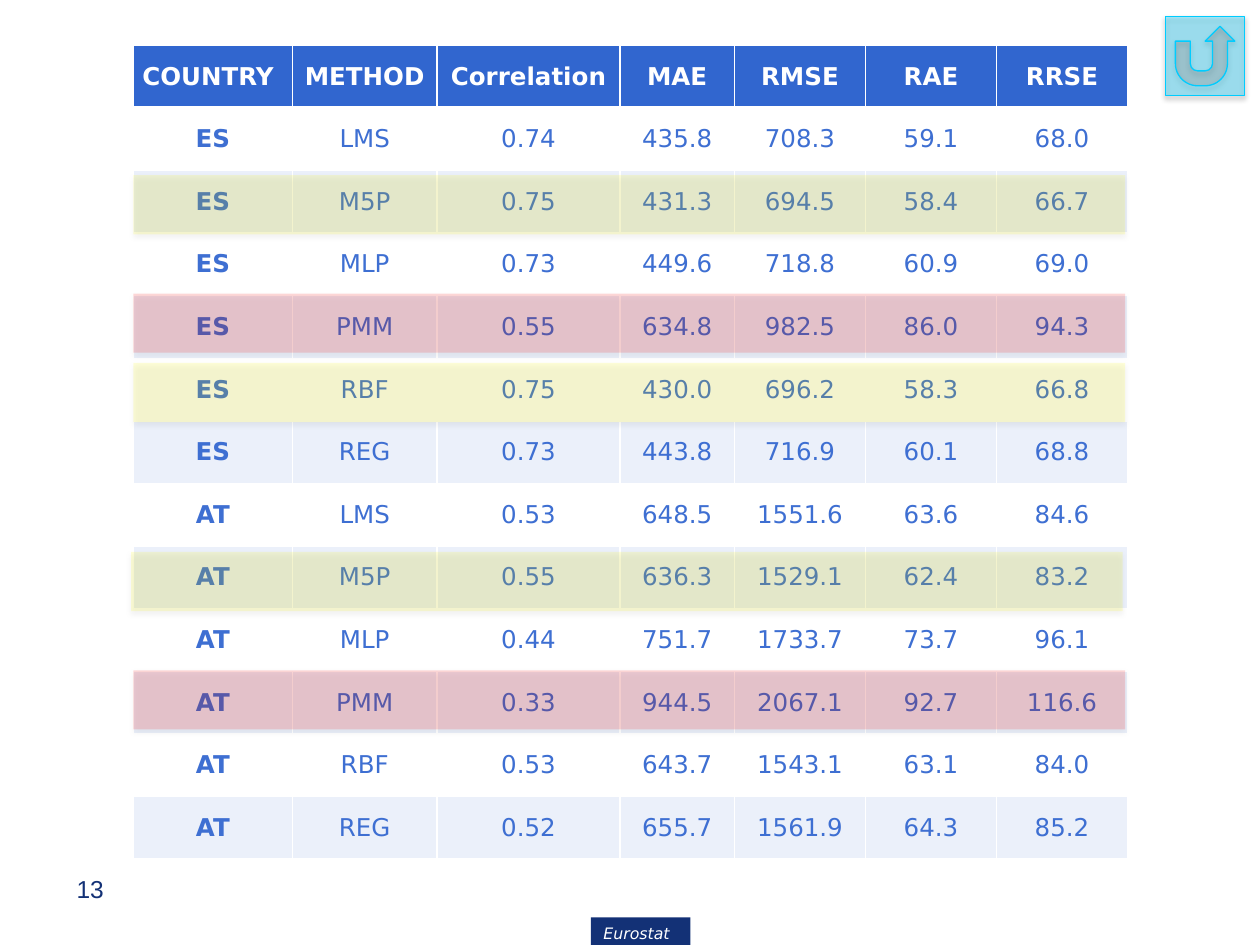
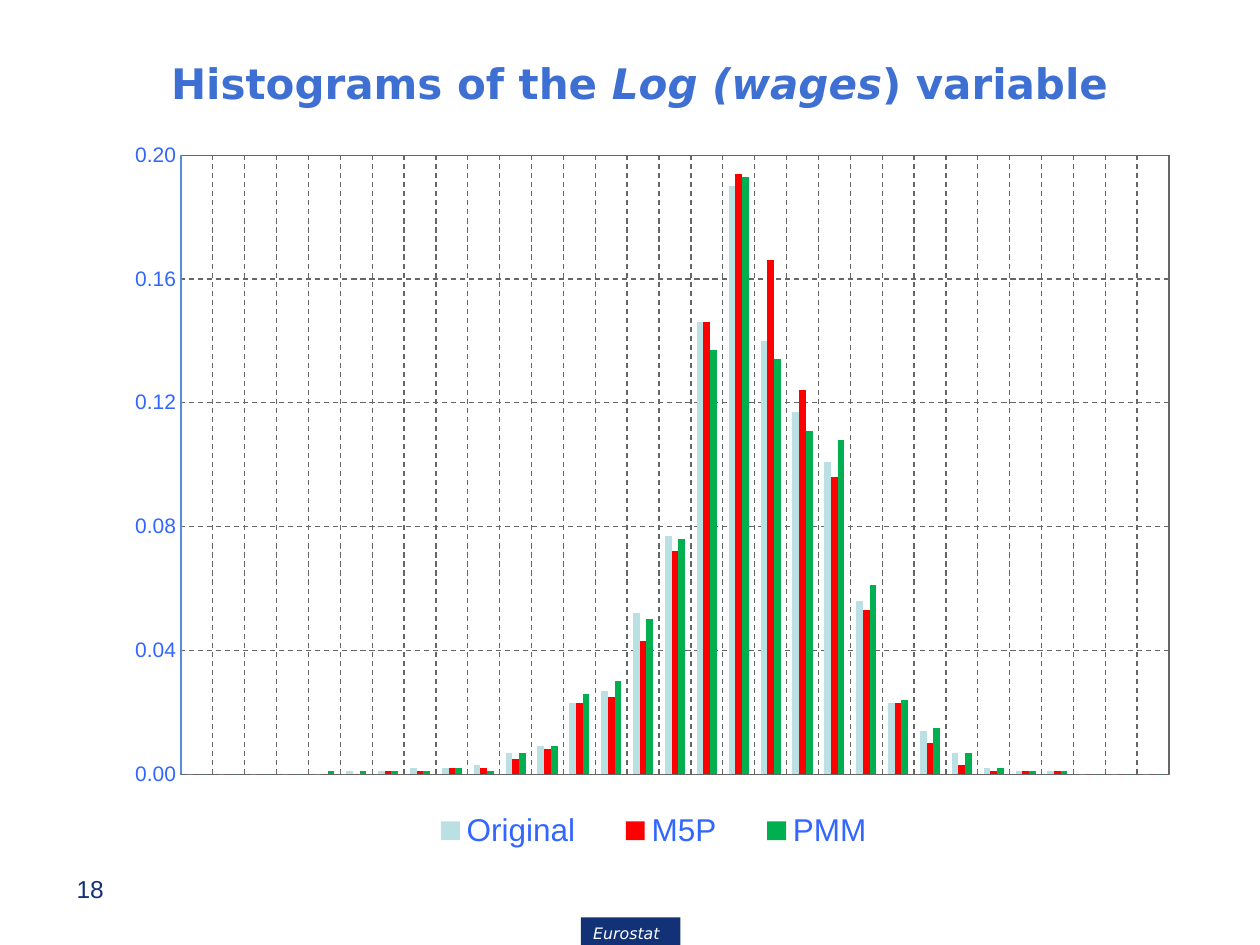
from lxml.etree import SubElement
from pptx import Presentation
from pptx.chart.data import CategoryChartData
from pptx.dml.color import RGBColor
from pptx.enum.chart import XL_CHART_TYPE as ChartType, XL_LEGEND_POSITION as LegendSpot
from pptx.enum.chart import XL_TICK_LABEL_POSITION as LabelSpot, XL_TICK_MARK as TickMark
from pptx.enum.dml import MSO_LINE_DASH_STYLE as Dash
from pptx.enum.shapes import MSO_SHAPE as Shape
from pptx.enum.text import MSO_ANCHOR as Anchor, PP_ALIGN as Align
from pptx.oxml import parse_xml
from pptx.oxml.ns import nsdecls, qn
from pptx.util import Inches, Pt

NAVY, BLUE, HEADER_BLUE, WHITE = "133176", "3E6FD2", "3166CF", "FFFFFF"
YELLOW, RED, CYAN, GRID, LABEL_BLUE = "FFFF00", "FF0000", "00CCFF", "666666", "3366FF"
SANS, ARIAL = "DejaVu Sans", "Arial"

HEADINGS = ["COUNTRY", "METHOD", "Correlation", "MAE", "RMSE", "RAE", "RRSE"]
COLUMN_WIDTHS = [1.26, 1.15, 1.45, 0.91, 1.04, 1.04, 1.04]
RESULTS = """ES LMS 0.74 435.8 708.3 59.1 68.0
ES M5P 0.75 431.3 694.5 58.4 66.7
ES MLP 0.73 449.6 718.8 60.9 69.0
ES PMM 0.55 634.8 982.5 86.0 94.3
ES RBF 0.75 430.0 696.2 58.3 66.8
ES REG 0.73 443.8 716.9 60.1 68.8
AT LMS 0.53 648.5 1551.6 63.6 84.6
AT M5P 0.55 636.3 1529.1 62.4 83.2
AT MLP 0.44 751.7 1733.7 73.7 96.1
AT PMM 0.33 944.5 2067.1 92.7 116.6
AT RBF 0.53 643.7 1543.1 63.1 84.0
AT REG 0.52 655.7 1561.9 64.3 85.2"""
HIGHLIGHTS = [(1.06, 1.39, YELLOW), (1.06, 2.33, RED), (1.06, 2.88, YELLOW),
              (1.04, 4.38, YELLOW), (1.06, 5.32, RED)]
HISTOGRAM = {
    "Original": ("BBE0E3", [0, 0, 0, 0, 0, 0.001, 0.001, 0.002, 0.002, 0.003, 0.007, 0.009,
                            0.023, 0.027, 0.052, 0.077, 0.146, 0.19, 0.14, 0.117, 0.101,
                            0.056, 0.023, 0.014, 0.007, 0.002, 0.001, 0.001, 0, 0, 0]),
    "M5P": (RED, [0, 0, 0, 0, 0, 0, 0.001, 0.001, 0.002, 0.002, 0.005, 0.008,
                  0.023, 0.025, 0.043, 0.072, 0.146, 0.194, 0.166, 0.124, 0.096,
                  0.053, 0.023, 0.01, 0.003, 0.001, 0.001, 0.001, 0, 0, 0]),
    "PMM": ("00B050", [0, 0, 0, 0, 0.001, 0.001, 0.001, 0.001, 0.002, 0.001, 0.007, 0.009,
                       0.026, 0.03, 0.05, 0.076, 0.137, 0.193, 0.134, 0.111, 0.108,
                       0.061, 0.024, 0.015, 0.007, 0.002, 0.001, 0.001, 0, 0, 0]),
}


def rgb(value):
    """Turn a hex string into a colour."""
    return RGBColor.from_string(value)


def set_all(target, values):
    """Set each named attribute on the target."""
    for name, value in values.items():
        setattr(target, name, value)


def style_font(font, size, face, color, **extra):
    """Give a font its size, face, colour and emphasis."""
    set_all(font, {"size": Pt(size), "name": face, **extra})
    font.color.rgb = rgb(color)


def paint(fill, color, holder, alpha=None):
    """Fill with a colour, made translucent when a percentage is given."""
    fill.solid()
    fill.fore_color.rgb = rgb(color)
    if alpha:
        tint = holder.find(qn("a:solidFill")).find(qn("a:srgbClr"))
        SubElement(tint, qn("a:alpha"), val=str(alpha * 1000))


def draw_line(line, color, dash=None):
    """Draw a thin line, dashed if asked."""
    line.color.rgb = rgb(color)
    set_all(line, {"width": Pt(0.75), "dash_style": dash})


def add_text(slide, box, runs, size, face, color):
    """Add a text box whose runs are pairs of wording and emphasis."""
    text_box = slide.shapes.add_textbox(*map(Inches, box))
    text_box.text_frame.word_wrap = True
    para = text_box.text_frame.paragraphs[0]
    for wording, emphasis in runs:
        span = para.add_run()
        span.text = wording
        style_font(span.font, size, face, color, **emphasis)


def add_panel(slide, box, color, kind=Shape.RECTANGLE, alpha=None, shadow=False):
    """Add a borderless filled shape, with a soft shadow if asked."""
    panel = slide.shapes.add_shape(kind, *map(Inches, box))
    panel.shadow.inherit = False
    properties = panel._element.spPr
    paint(panel.fill, color, properties, alpha)
    panel.line.fill.background()
    if shadow:
        properties.find(qn("a:effectLst")).append(parse_xml(
            f'<a:outerShdw {nsdecls("a")} blurRad="{Pt(3.1)}" dist="{Pt(1.8)}" dir="5400000"'
            ' rotWithShape="0"><a:srgbClr val="000000"><a:alpha val="35000"/></a:srgbClr>'
            '</a:outerShdw>'))
    return panel


def add_footer(slide, number, left):
    """Add the page number and the footer badge."""
    add_text(slide, (0.51, 6.89, 2.33, 0.52), [(number, {})], 14, ARIAL, NAVY)
    badge = add_panel(slide, (left, 7.28, 0.79, 0.25), NAVY)
    set_all(badge.text_frame, {"word_wrap": False, "vertical_anchor": Anchor.MIDDLE})
    para = badge.text_frame.paragraphs[0]
    para.text, para.alignment = "Eurostat", Align.LEFT
    style_font(para.runs[0].font, 9, SANS, WHITE, italic=True)


def add_borders(cell, bottom):
    """Draw white borders round a cell, the bottom one in its own width."""
    properties = cell._tc.get_or_add_tcPr()
    for side, width in zip(("lnL", "lnR", "lnT", "lnB"), (1, 1, 1, bottom)):
        properties.append(parse_xml(
            f'<a:{side} {nsdecls("a")} w="{Pt(width)}"><a:solidFill>'
            f'<a:srgbClr val="{WHITE}"/></a:solidFill></a:{side}>'))


def fill_cell(cell, wording, row, column):
    """Write one result cell and style it by its row and column."""
    header = row == 0
    set_all(cell, {"margin_left": Inches(0.07), "margin_right": Inches(0.07), "margin_top": 0,
                   "margin_bottom": 0, "vertical_anchor": Anchor.MIDDLE})
    add_borders(cell, 3 if header else 1)
    if header:
        paint(cell.fill, HEADER_BLUE, cell._tc.tcPr)
    elif row % 2 == 0:
        paint(cell.fill, BLUE, cell._tc.tcPr, 10)
    else:
        cell.fill.background()
    para = cell.text_frame.paragraphs[0]
    para.text = wording
    para.alignment = Align.JUSTIFY if header and column == 0 else Align.CENTER
    style_font(para.runs[0].font, 14, SANS, WHITE if header else BLUE,
               bold=header or column == 0)


def add_results(slide, box):
    """Add the table of methods by country."""
    rows = [HEADINGS] + [line.split() for line in RESULTS.splitlines()]
    frame = slide.shapes.add_table(len(rows), len(HEADINGS), *map(Inches, box))
    table = frame.table
    table.horz_banding = False
    for column, width in zip(table.columns, COLUMN_WIDTHS):
        column.width = Inches(width)
    for row, wordings in enumerate(rows):
        table.rows[row].height = Inches(box[3] / len(rows))
        for column, wording in enumerate(wordings):
            fill_cell(table.cell(row, column), wording, row, column)


def manual_layout(x, y, width, height, inner=False):
    """Make a chart layout from fractions of the chart's size."""
    target = '<c:layoutTarget val="inner"/>' if inner else ""
    places = "".join(f'<c:{name} val="{value}"/>' for name, value in
                     zip("xywh", (x, y, width, height)))
    return parse_xml(f'<c:layout {nsdecls("c")}><c:manualLayout>{target}'
                     '<c:xMode val="edge"/><c:yMode val="edge"/>'
                     f'{places}</c:manualLayout></c:layout>')


def place_plot(chart):
    """Place and frame the plot area, and place the legend below it."""
    area = chart._chartSpace.chart.plotArea
    legend = chart.legend._element
    for part in (area, legend):
        for layout in part.findall(qn("c:layout")):
            part.remove(layout)
    area.insert(0, manual_layout(0.119, 0.063, 0.859, 0.79, inner=True))
    area.append(parse_xml(
        f'<c:spPr {nsdecls("c", "a")}><a:noFill/><a:ln w="{Pt(0.75)}"><a:solidFill>'
        f'<a:srgbClr val="{GRID}"/></a:solidFill></a:ln></c:spPr>'))
    legend.find(qn("c:legendPos")).addnext(manual_layout(0.31, 0.88, 0.44, 0.09))


def add_histogram(slide, box):
    """Add the clustered columns for the three distributions."""
    data = CategoryChartData(number_format="0.000")
    data.categories = [str(number) for number in range(1, 32)]
    for name, (_, values) in HISTOGRAM.items():
        data.add_series(name, values)
    chart = slide.shapes.add_chart(
        ChartType.COLUMN_CLUSTERED, *map(Inches, box), data).chart
    style_font(chart.font, 10, "Calibri", "000000")
    set_all(chart, {"has_title": False, "has_legend": True})
    plot = chart.plots[0]
    set_all(plot, {"gap_width": 176, "overlap": 0, "vary_by_categories": False})
    for series, (color, _) in zip(plot.series, HISTOGRAM.values()):
        series.format.fill.solid()
        series.format.fill.fore_color.rgb = rgb(color)
    bins, shares = chart.category_axis, chart.value_axis
    for axis, color in ((bins, GRID), (shares, "558ED5")):
        set_all(axis, {"has_major_gridlines": True, "major_tick_mark": TickMark.NONE,
                       "minor_tick_mark": TickMark.NONE})
        draw_line(axis.major_gridlines.format.line, GRID, Dash.DASH)
        draw_line(axis.format.line, color)
    bins.tick_label_position = LabelSpot.NONE
    set_all(shares, {"minimum_scale": 0, "maximum_scale": 0.2, "major_unit": 0.04})
    set_all(shares.tick_labels, {"number_format": "0.00", "number_format_is_linked": False})
    style_font(shares.tick_labels.font, 12, ARIAL, LABEL_BLUE)
    set_all(chart.legend, {"position": LegendSpot.BOTTOM, "include_in_layout": False})
    style_font(chart.legend.font, 18, ARIAL, LABEL_BLUE)
    place_plot(chart)


def build_results_slide(slide):
    """Build the results table with its highlighted rows."""
    add_results(slide, (1.06, 0.36, 7.87, 6.46))
    for left, top, color in HIGHLIGHTS:
        add_panel(slide, (left, top, 7.87, 0.47), color, alpha=15, shadow=True)
    add_footer(slide, "13", 4.69)
    button = add_panel(slide, (9.25, 0.13, 0.63, 0.63), CYAN, Shape.ACTION_BUTTON_RETURN,
                       alpha=32, shadow=True)
    draw_line(button.line, CYAN)


def build_histogram_slide(slide):
    """Build the titled histogram."""
    title = [("Histograms of the ", {"bold": True}),
             ("Log (wages", {"bold": True, "italic": True}),
             (") variable", {"bold": True})]
    add_text(slide, (1.26, 0.41, 7.83, 0.5), title, 24, SANS, BLUE)
    add_histogram(slide, (0.35, 0.84, 9.13, 6.22))
    add_footer(slide, "18", 4.61)


def main():
    """Build and save the deck."""
    deck = Presentation()
    set_all(deck, {"slide_width": Inches(10), "slide_height": Inches(7.5)})
    for build in (build_results_slide, build_histogram_slide):
        build(deck.slides.add_slide(deck.slide_layouts[6]))
    deck.save("out.pptx")


if __name__ == "__main__":
    main()
